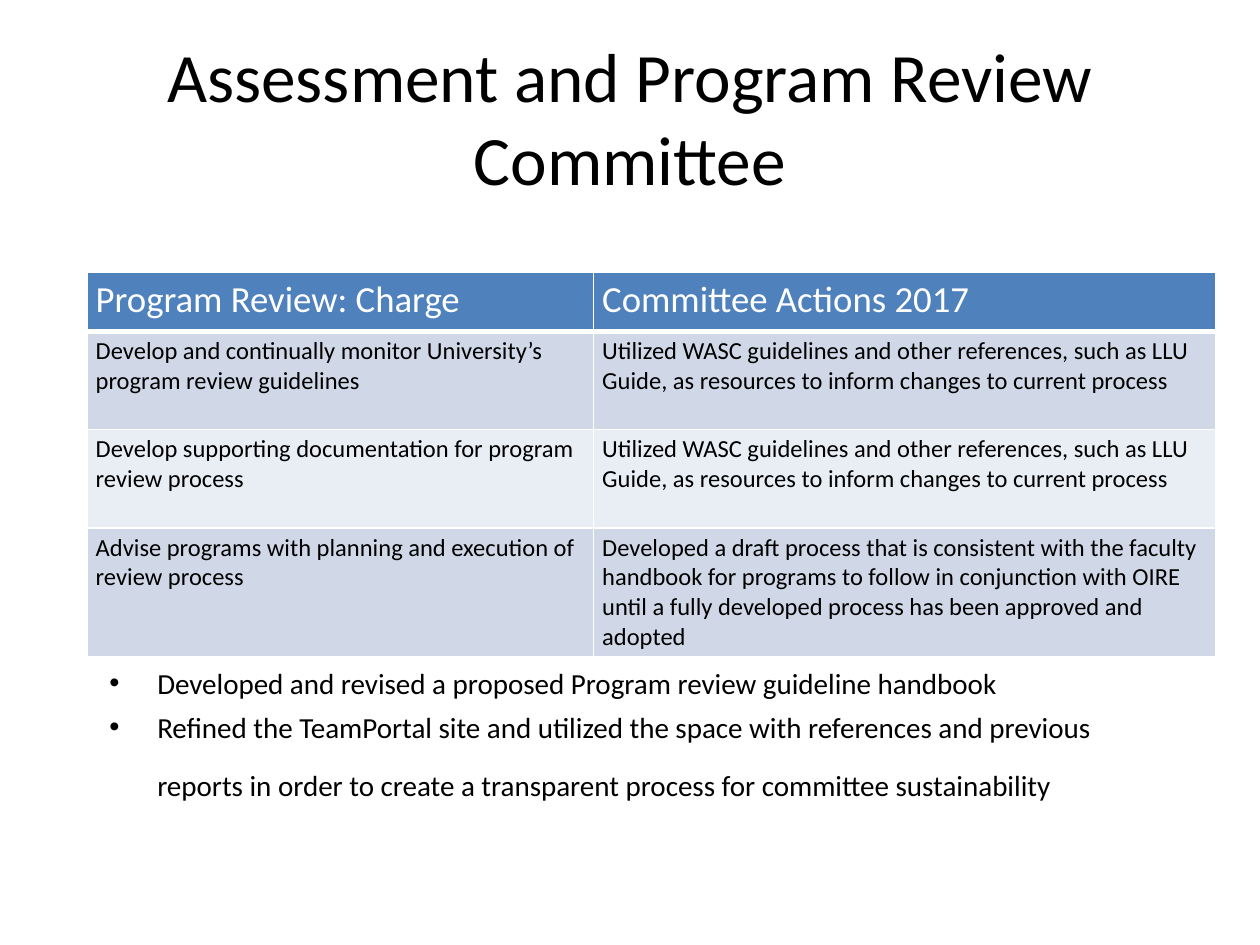
from typing import NamedTuple

from lxml import etree
from pptx import Presentation
from pptx.dml.color import RGBColor
from pptx.enum.text import MSO_ANCHOR, PP_ALIGN
from pptx.oxml.ns import qn
from pptx.util import Inches, Pt

CENTER, LEFT = PP_ALIGN.CENTER, PP_ALIGN.LEFT
MIDDLE, TOP = MSO_ANCHOR.MIDDLE, MSO_ANCHOR.TOP
FONT_NAME = "Calibri"
COLORS = {"text": "000000", "white": "FFFFFF", "header": "4F81BD",
          "band_dark": "D0D8E8", "band_light": "E9EDF4"}
CELL_FORMAT = {"margin_left": Inches(0.07), "margin_right": Inches(0.07),
               "margin_top": Inches(0.04), "margin_bottom": Inches(0.04),
               "vertical_anchor": TOP}


class Box(NamedTuple):
    left: float
    top: float
    width: float
    height: float

    def lengths(self) -> list:
        return [Inches(value) for value in self]


class Bullet(NamedTuple):
    text: str
    space_before: float
    tail_size: float = 0


class Row(NamedTuple):
    height: float
    texts: tuple
    fill: str
    size: float = 14
    color: str = "text"
    bottom_border: float = 1


WASC_ACTION = ("Utilized WASC guidelines and other references, such as LLU Guide, "
               "as resources to inform changes to current process")
COLUMN_WIDTHS = (4.02, 4.94)
ROWS = (
    Row(0.47, ("Program Review: Charge", "Committee Actions 2017"),
        "header", 21, "white", 3),
    Row(0.78, ("Develop and continually monitor University’s program review guidelines",
               WASC_ACTION), "band_dark"),
    Row(0.78, ("Develop supporting documentation for program review process",
               WASC_ACTION), "band_light"),
    Row(1.02, ("Advise programs with planning and execution of review process",
               "Developed a draft process that is consistent with the faculty handbook "
               "for programs to follow in conjunction with OIRE until a fully developed "
               "process has been approved and adopted"), "band_dark"),
)
BULLETS = (
    Bullet("Developed and revised a proposed Program review guideline handbook", 3.3),
    Bullet("Refined the TeamPortal site and utilized the space with references and "
           "previous reports in order to create a transparent process for committee "
           "sustainability", 5.4, 29.6),
)


def apply_format(target, values: dict) -> None:
    for name, value in values.items():
        setattr(target, name, value)


def add_run(paragraph, text: str, size: float, color: str = "text") -> None:
    run = paragraph.add_run()
    run.text = text
    apply_format(run.font, {"name": FONT_NAME, "size": Pt(size), "bold": False})
    run.font.color.rgb = RGBColor.from_string(COLORS[color])


def add_text_frame(slide, box: Box, anchor):
    frame = slide.shapes.add_textbox(*box.lengths()).text_frame
    apply_format(frame, {"word_wrap": True, "vertical_anchor": anchor})
    return frame


def add_title(slide, box: Box, text: str) -> None:
    paragraph = add_text_frame(slide, box, MIDDLE).paragraphs[0]
    paragraph.alignment = CENTER
    add_run(paragraph, text, 39.6)


def add_bullets(slide, box: Box, bullets: tuple) -> None:
    """Bulleted list; a tail size adds a larger closing space that opens up the last line."""
    frame = add_text_frame(slide, box, TOP)
    for index, bullet in enumerate(bullets):
        paragraph = frame.add_paragraph() if index else frame.paragraphs[0]
        apply_format(paragraph, {"alignment": LEFT, "space_before": Pt(bullet.space_before)})
        properties = paragraph._p.get_or_add_pPr()
        properties.set("marL", str(Inches(0.38)))
        properties.set("indent", str(-Inches(0.38)))
        etree.SubElement(properties, qn("a:buFont")).set("typeface", "Arial")
        etree.SubElement(properties, qn("a:buChar")).set("char", "•")
        add_run(paragraph, bullet.text, 16.6)
        if bullet.tail_size:
            add_run(paragraph, " ", bullet.tail_size)


def set_borders(cell, bottom_width: float) -> None:
    properties = cell._tc.get_or_add_tcPr()
    widths = {"a:lnL": 1, "a:lnR": 1, "a:lnT": 1, "a:lnB": bottom_width}
    for position, (tag, width) in enumerate(widths.items()):
        line = etree.Element(qn(tag), w=str(Pt(width)))
        fill = etree.SubElement(line, qn("a:solidFill"))
        etree.SubElement(fill, qn("a:srgbClr")).set("val", COLORS["white"])
        properties.insert(position, line)


def add_review_table(slide, left: float, top: float) -> None:
    box = Box(left, top, sum(COLUMN_WIDTHS), sum(row.height for row in ROWS))
    table = slide.shapes.add_table(len(ROWS), len(COLUMN_WIDTHS), *box.lengths()).table
    for column, width in zip(table.columns, COLUMN_WIDTHS):
        column.width = Inches(width)
    for row, table_row in zip(ROWS, table.rows):
        table_row.height = Inches(row.height)
        for cell, text in zip(table_row.cells, row.texts):
            apply_format(cell, CELL_FORMAT)
            cell.fill.solid()
            cell.fill.fore_color.rgb = RGBColor.from_string(COLORS[row.fill])
            set_borders(cell, row.bottom_border)
            add_run(cell.text_frame.paragraphs[0], text, row.size, row.color)


def main() -> None:
    presentation = Presentation()
    presentation.slide_width, presentation.slide_height = Inches(10), Inches(7.5)
    slide = presentation.slides.add_slide(presentation.slide_layouts[6])
    add_title(slide, Box(0.5, 0.3, 9, 1.25), "Assessment and Program Review Committee")
    add_bullets(slide, Box(0.77, 5.23, 8.46, 1.09), BULLETS)
    add_review_table(slide, 0.69, 2.16)
    presentation.save("out.pptx")


if __name__ == "__main__":
    main()
